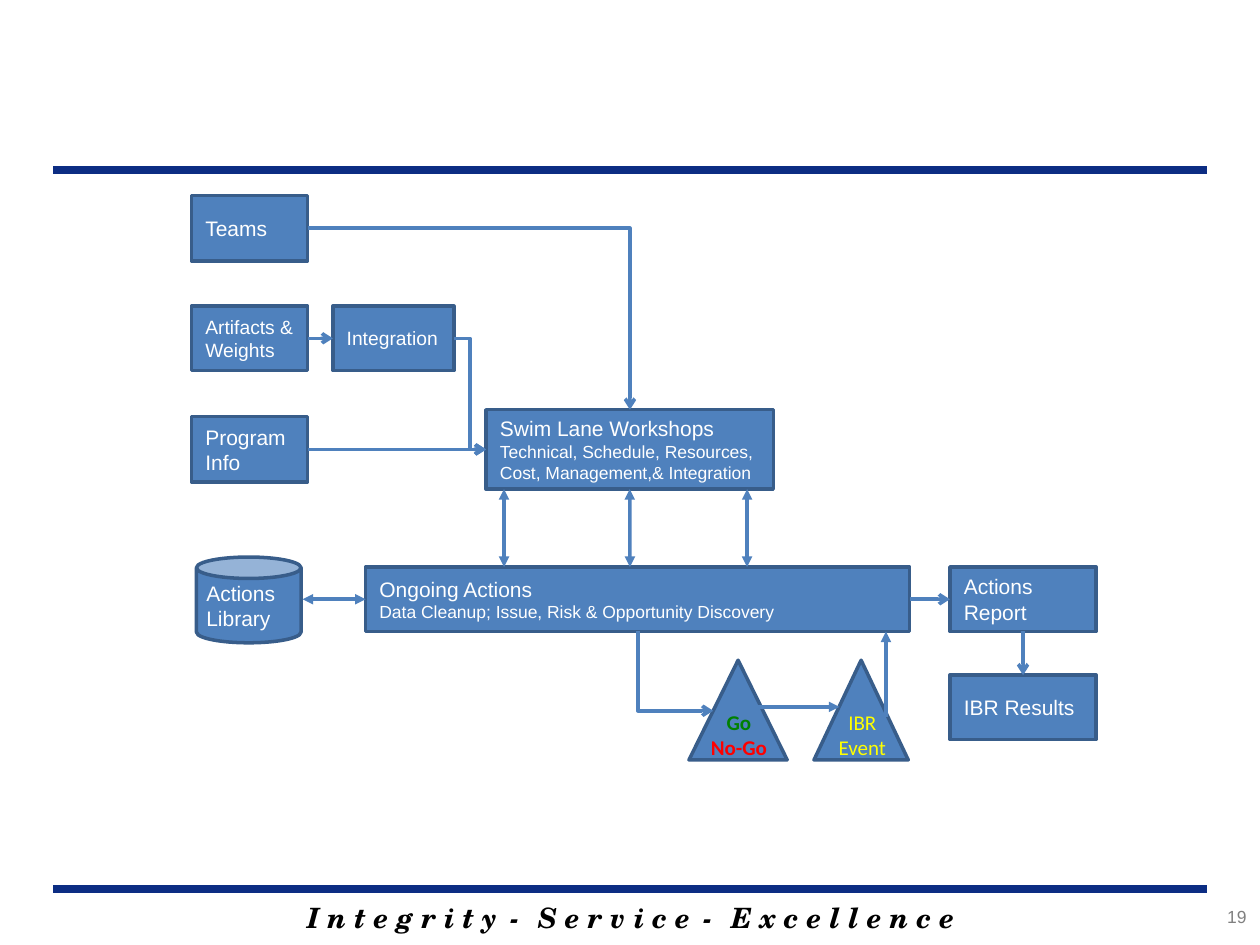
from lxml.etree import SubElement
from pptx import Presentation
from pptx.dml.color import RGBColor
from pptx.enum.shapes import MSO_CONNECTOR, MSO_SHAPE
from pptx.enum.text import MSO_ANCHOR, PP_ALIGN
from pptx.oxml.ns import qn
from pptx.util import Cm, Pt

NAVY = RGBColor(0x0C, 0x2D, 0x83)
BLUE = RGBColor(0x4F, 0x81, 0xBD)
EDGE = RGBColor(0x38, 0x5D, 0x8A)
WHITE = RGBColor(0xFF, 0xFF, 0xFF)
BLACK = RGBColor(0x00, 0x00, 0x00)
GRAY = RGBColor(0x80, 0x80, 0x80)
GREEN = RGBColor(0x00, 0x80, 0x00)
RED = RGBColor(0xFF, 0x00, 0x00)
YELLOW = RGBColor(0xFF, 0xFF, 0x00)

BOX_INSETS = (0.28, 0.15, 0.2, 0.15)
SMALL_INSETS = (0.2, 0.1, 0.2, 0.1)
RECT, CAN, TRIANGLE = MSO_SHAPE.RECTANGLE, MSO_SHAPE.CAN, MSO_SHAPE.ISOSCELES_TRIANGLE
TOP, LEFT, BOTTOM, RIGHT = range(4)

# Process steps: name, shape, (left, top, width, height) in cm, [(text, size)]
STEPS = [
    ("teams", RECT, (3.86, 3.94, 2.34, 1.32), [("Teams", 12)]),
    ("artifacts", RECT, (3.86, 6.17, 2.34, 1.3), [("Artifacts & Weights", 11)]),
    ("program", RECT, (3.86, 8.4, 2.34, 1.32), [("Program Info", 12)]),
    ("integration", RECT, (6.71, 6.17, 2.44, 1.3), [("Integration", 11)]),
    ("workshops", RECT, (9.8, 8.26, 5.79, 1.6),
     [("Swim Lane Workshops", 12),
      ("Technical, Schedule, Resources, Cost, Management,& Integration", 10)]),
    ("ongoing", RECT, (7.37, 11.43, 10.97, 1.3),
     [("Ongoing Actions", 12),
      ("Data Cleanup; Issue, Risk & Opportunity Discovery", 10)]),
    ("report", RECT, (19.15, 11.43, 2.95, 1.3), [("Actions", 12), ("Report", 12)]),
    ("results", RECT, (19.15, 13.61, 2.95, 1.3), [("IBR Results", 12)]),
    ("library", CAN, (3.96, 11.23, 2.11, 1.73), [("Actions Library", 12)]),
    ("go", TRIANGLE, (13.89, 13.31, 1.98, 2.01), []),
    ("event", TRIANGLE, (16.41, 13.31, 1.9, 2.01), []),
]

# Straight arrows between the middles of two sides
JOINED = [
    ("artifacts", RIGHT, "integration", LEFT),
    ("program", RIGHT, "workshops", LEFT),
    ("ongoing", RIGHT, "report", LEFT),
    ("report", BOTTOM, "results", TOP),
]

# Elbows: geometry, start, end, head, tail
ELBOWS = [
    ("bentConnector2", (6.2, 4.6), (12.7, 8.26), None, "arrow"),
    ("bentConnector3", (9.15, 6.82), (9.8, 9.06), None, "arrow"),
    ("bentConnector2", (14.38, 14.33), (12.86, 12.73), "arrow", None),
]

# Two-way arrows between workshops and ongoing actions
EXCHANGE_X = (10.16, 12.7, 15.06)

# Triangle captions: area, lines of (text, colour, bold)
CAPTIONS = [
    ((14.02, 14.2, 1.75, 1.22), [("Go", GREEN, True), ("No-Go", RED, True)]),
    ((16.1, 14.2, 2.57, 1.22), [("IBR", YELLOW, False), ("Event", YELLOW, False)]),
]

MOTTO = ["I n t e g r i t y", "S e r v i c e", "E x c e l l e n c e"]


def add_span(para, text, size, color, font="Arial", bold=False, italic=False):
    span = para.add_run()
    span.text = text
    span.font.name, span.font.size = font, Pt(size)
    span.font.bold, span.font.italic = bold, italic
    span.font.color.rgb = color
    return span


def set_frame(box, insets):
    frame = box.text_frame
    frame.word_wrap = True
    (frame.margin_left, frame.margin_top,
     frame.margin_right, frame.margin_bottom) = map(Cm, insets)
    return frame


def add_text_area(page, area, align, insets=(0.25, 0.13, 0.25, 0.13)):
    box = page.shapes.add_textbox(*map(Cm, area))
    para = set_frame(box, insets).paragraphs[0]
    para.alignment = align
    return para


def add_step(page, shape, area, lines):
    box = page.shapes.add_shape(shape, *map(Cm, area))
    box.shadow.inherit = False
    box.fill.solid()
    box.fill.fore_color.rgb = BLUE
    box.line.color.rgb, box.line.width = EDGE, Pt(2)
    frame = set_frame(box, SMALL_INSETS if shape == CAN else BOX_INSETS)
    frame.vertical_anchor = MSO_ANCHOR.MIDDLE
    for index, (text, size) in enumerate(lines):
        para = frame.add_paragraph() if index else frame.paragraphs[0]
        para.alignment = PP_ALIGN.LEFT
        add_span(para, text, size, WHITE)
    return box


def add_line(page, start, end, head=None, tail=None, color=BLUE, width=2,
             kind=MSO_CONNECTOR.STRAIGHT):
    line = page.shapes.add_connector(kind, *map(Cm, start + end))
    line.line.color.rgb, line.line.width = color, Pt(width)
    stroke = line.line._get_or_add_ln()
    for tag, arrow in (("a:headEnd", head), ("a:tailEnd", tail)):
        if arrow:
            SubElement(stroke, qn(tag), type=arrow)
    SubElement(line._element.spPr, qn("a:effectLst"))
    return line


def main():
    deck = Presentation()
    deck.slide_width, deck.slide_height = Cm(25.4), Cm(19.05)
    page = deck.slides.add_slide(deck.slide_layouts[6])

    # Rules, motto and page number
    for y in (3.43, 17.93):
        add_line(page, (1.07, y), (24.33, y), color=NAVY, width=4.5)
    para = add_text_area(page, (3.61, 18.03, 18.21, 0.94), PP_ALIGN.CENTER)
    for index, word in enumerate(MOTTO):
        if index:
            dash = add_span(para, " - ", 16, BLACK, "TeX Gyre Schola", True, True)
            dash.font._element.set("spc", "300")
        add_span(para, word, 16, BLACK, "TeX Gyre Schola", True, True)
    para = add_text_area(page, (22.2, 18.14, 3.18, 0.84), PP_ALIGN.RIGHT)
    add_span(para, "19", 10, GRAY)

    # Process steps
    boxes = {name: add_step(page, shape, area, lines)
             for name, shape, area, lines in STEPS}

    # Arrows
    for source, source_side, target, target_side in JOINED:
        line = add_line(page, (0, 0), (1, 1), tail="arrow")
        line.begin_connect(boxes[source], source_side)
        line.end_connect(boxes[target], target_side)
    for geometry, start, end, head, tail in ELBOWS:
        line = add_line(page, start, end, head, tail, kind=MSO_CONNECTOR.ELBOW)
        line._element.spPr.find(qn("a:prstGeom")).set("prst", geometry)
    for x in EXCHANGE_X:
        line = add_line(page, (x, 9.86), (x, 11.43), "triangle", "triangle")
        if x == 12.7:
            line.begin_connect(boxes["workshops"], BOTTOM)
    line = add_line(page, (6.1, 12.08), (7.37, 12.08), "triangle", "triangle")
    line.end_connect(boxes["ongoing"], LEFT)
    add_line(page, (15.29, 14.25), (16.92, 14.25), tail="triangle")
    add_line(page, (17.86, 14.45), (17.86, 12.73), tail="triangle")

    # Triangle captions
    for area, lines in CAPTIONS:
        para = add_text_area(page, area, PP_ALIGN.CENTER, SMALL_INSETS)
        for index, (text, color, bold) in enumerate(lines):
            if index:
                para.add_line_break()
            add_span(para, text, 12, color, "Calibri", bold)

    deck.save("out.pptx")


if __name__ == "__main__":
    main()
